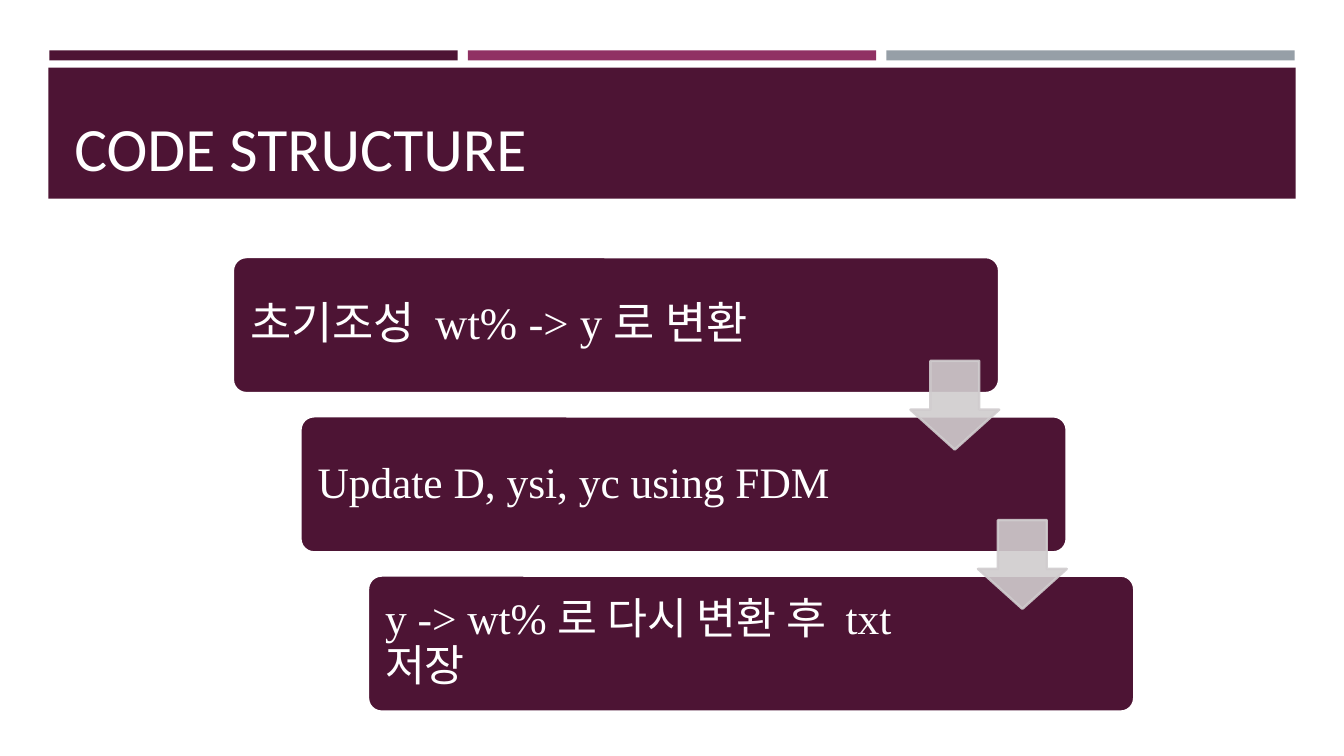
"""Build the code structure slide: a header band and three descending steps."""
from lxml.etree import SubElement
from pptx import Presentation
from pptx.dml.color import RGBColor
from pptx.enum.shapes import MSO_SHAPE
from pptx.enum.text import MSO_ANCHOR
from pptx.oxml.ns import qn
from pptx.util import Inches, Pt

PLUM = RGBColor(0x4D, 0x14, 0x34)
MAGENTA = RGBColor(0x90, 0x31, 0x63)
SLATE = RGBColor(0x96, 0x9F, 0xA7)
ARROW_GRAY = RGBColor(0xD0, 0xCC, 0xCE)
WHITE = RGBColor(0xFF, 0xFF, 0xFF)
HANGUL, LATIN = "Arial", "Times New Roman"

presentation = Presentation()
presentation.slide_width = Inches(13.33)
presentation.slide_height = Inches(7.5)
slide = presentation.slides.add_slide(presentation.slide_layouts[6])


def add_block(preset, left, top, width, height, color, outline=None):
    shape = slide.shapes.add_shape(
        preset, Inches(left), Inches(top), Inches(width), Inches(height))
    shape.shadow.inherit = False
    shape.fill.solid()
    shape.fill.fore_color.rgb = color
    if outline is None:
        shape.line.fill.background()
    else:
        shape.line.color.rgb = outline
        shape.line.width = Pt(1.75)
    return shape


def add_label(left, top, width, height, runs, size, anchor, inset):
    frame = slide.shapes.add_textbox(
        Inches(left), Inches(top), Inches(width), Inches(height)).text_frame
    frame.word_wrap = True
    frame.vertical_anchor = anchor
    frame.margin_left = frame.margin_right = Inches(inset[0])
    frame.margin_top = frame.margin_bottom = Inches(inset[1])
    paragraph = frame.paragraphs[0]
    paragraph.line_spacing = 0.9
    for text, font_name in runs:
        run = paragraph.add_run()
        run.text = text
        run.font.name = font_name
        run.font.size = Pt(size)
        run.font.color.rgb = WHITE


for column, color in enumerate((PLUM, MAGENTA, SLATE)):
    add_block(MSO_SHAPE.RECTANGLE, 0.49 + 4.15 * column, 0.5, 4.05, 0.1, color)
add_block(MSO_SHAPE.RECTANGLE, 0.48, 0.67, 12.37, 1.3, PLUM)
add_label(0.64, 0.77, 12.06, 1.11, [("CODE STRUCTURE", "Calibri")], 44,
          MSO_ANCHOR.BOTTOM, (0.1, 0.05))

STEP_LEFT, STEP_TOP = 2.31, 2.55
STEP_RIGHT, STEP_DOWN = 0.67, 1.58
steps = [
    (32, 6.14, [("초기조성 ", HANGUL), (" wt% -> y ", LATIN), ("로 변환", HANGUL)]),
    (31, 5.97, [("Update D, ysi, yc using FDM", LATIN)]),
    (31, 5.97, [("y -> wt% ", LATIN), ("로 다시 변환 후 ", HANGUL),
                (" txt ", LATIN), ("저장", HANGUL)]),
]
for row, (size, label_width, runs) in enumerate(steps):
    left = STEP_LEFT + STEP_RIGHT * row
    top = STEP_TOP + STEP_DOWN * row
    card = add_block(MSO_SHAPE.ROUNDED_RECTANGLE, left, top, 7.6, 1.35, PLUM, WHITE)
    card.adjustments[0] = 0.1
    add_label(left + 0.04, top + 0.04, label_width, 1.27, runs, size,
              MSO_ANCHOR.MIDDLE, (0.13, 0.13))

for row in range(len(steps) - 1):
    arrow = add_block(MSO_SHAPE.DOWN_ARROW, 9.03 + STEP_RIGHT * row,
                      3.58 + STEP_DOWN * row, 0.88, 0.88, ARROW_GRAY, ARROW_GRAY)
    arrow.adjustments[0] = 0.55
    arrow.adjustments[1] = 0.45
    for color_element in arrow.element.spPr.iter(qn("a:srgbClr")):
        SubElement(color_element, qn("a:alpha"), val="90000")

presentation.save("out.pptx")
